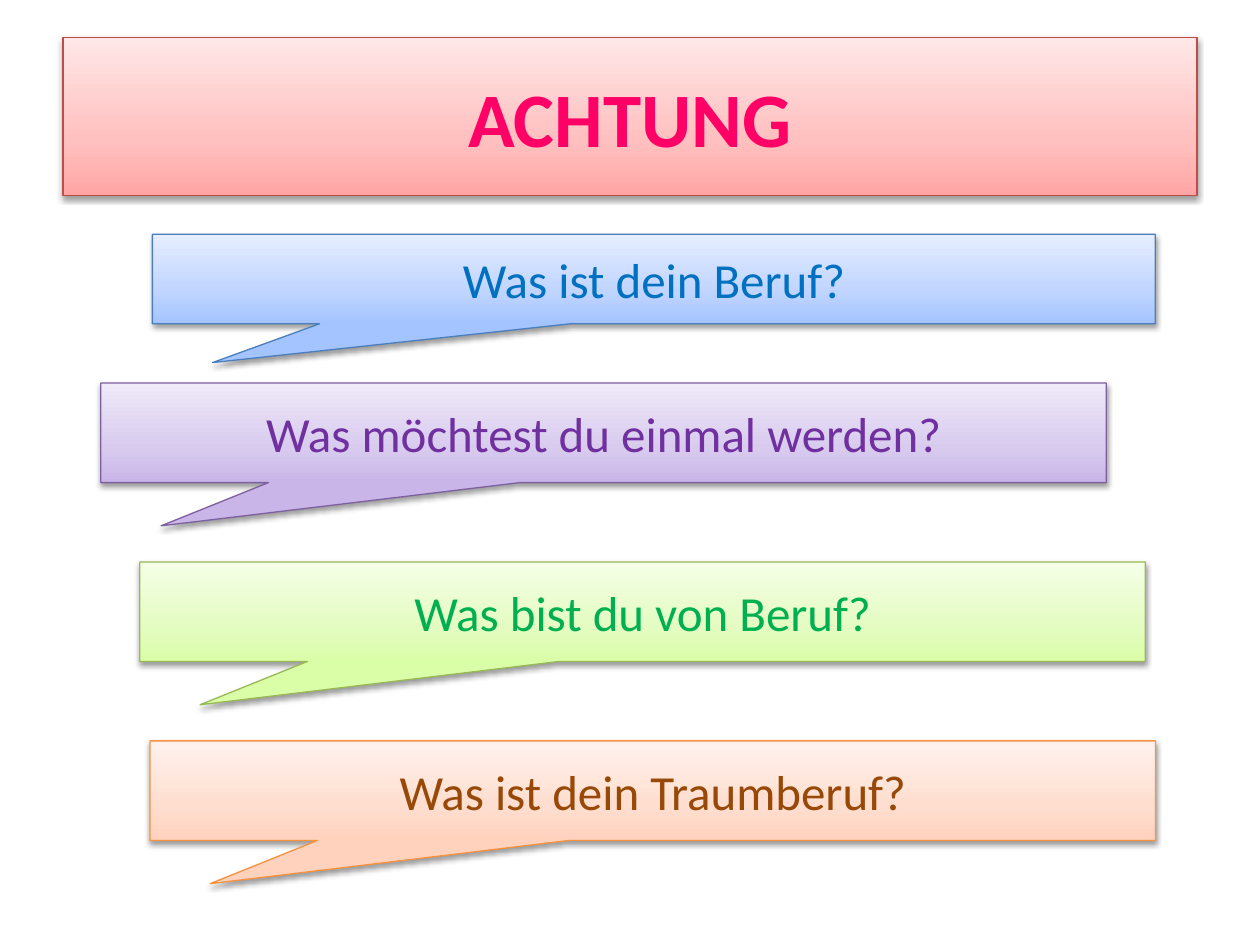
"""Build a slide with a title banner and four question callouts."""
from copy import deepcopy
from dataclasses import dataclass

from lxml import etree
from pptx import Presentation
from pptx.dml.color import RGBColor
from pptx.enum import shapes, text
from pptx.oxml.ns import qn
from pptx.util import Inches, Pt


@dataclass(frozen=True)
class Palette:
    stops: tuple[str, str, str]
    line: str
    font: str


@dataclass(frozen=True)
class Theme:
    font: str = "Calibri"
    title_size: int = 44
    body_size: int = 28
    line_width: float = 0.75
    stop_positions: tuple[float, ...] = (0, 0.35, 1)
    shadow: str = "000000"
    red: Palette = Palette(("FFA6A5", "FFC0BF", "FFE7E7"), "BF4C48", "FF0066")
    blue: Palette = Palette(("A4C4FF", "BFD4FF", "E6EEFF"), "4B7EBC", "0070C0")
    purple: Palette = Palette(("C9B5E8", "D8CBEE", "F0EAF9"), "7D60A0", "7030A0")
    green: Palette = Palette(("DAFDA7", "E4FCC2", "F5FFE7"), "98B955", "00B050")
    orange: Palette = Palette(("FFD2BD", "FFDED0", "FFF2ED"), "F69240", "984807")


@dataclass(frozen=True)
class Callout:
    words: str
    left: float
    top: float
    palette: Palette
    width: float = 7.98
    height: float = 0.79


THEME = Theme()
CALLOUTS = (
    Callout("Was ist dein Beruf?", 1.21, 1.86, THEME.blue, 7.96, 0.71),
    Callout("Was möchtest du einmal werden?", 0.8, 3.04, THEME.purple),
    Callout("Was bist du von Beruf?", 1.11, 4.46, THEME.green),
    Callout("Was ist dein Traumberuf?", 1.19, 5.88, THEME.orange),
)


def add_shadow(shape) -> None:
    """Give the shape a soft shadow straight below it."""
    shape.shadow.inherit = False
    effects = shape._element.spPr.find(qn("a:effectLst"))
    shadow = etree.SubElement(
        effects, qn("a:outerShdw"), blurRad=str(Pt(3.1)), dist=str(Pt(1.6)),
        dir="5400000", rotWithShape="0")
    color = etree.SubElement(shadow, qn("a:srgbClr"), val=THEME.shadow)
    etree.SubElement(color, qn("a:alpha"), val="38000")


def style_shape(shape, palette: Palette) -> None:
    """Apply the upward gradient, outline and shadow."""
    shape.fill.gradient()
    shape.fill.gradient_angle = 90
    stop_list = shape._element.spPr.find(".//" + qn("a:gsLst"))
    stop_list.append(deepcopy(stop_list[0]))
    stops = zip(shape.fill.gradient_stops, THEME.stop_positions, palette.stops)
    for stop, position, color in stops:
        stop.position = position
        stop.color.rgb = RGBColor.from_string(color)
    shape.line.color.rgb = RGBColor.from_string(palette.line)
    shape.line.width = Pt(THEME.line_width)
    add_shadow(shape)


def write_text(shape, words: str, *, size: int, color: str, bold: bool = False) -> None:
    """Write one centred line into the shape."""
    frame = shape.text_frame
    frame.word_wrap = True
    frame.vertical_anchor = text.MSO_ANCHOR.MIDDLE
    para = frame.paragraphs[0]
    para.alignment = text.PP_ALIGN.CENTER
    span = para.add_run()
    span.text = words
    span.font.name = THEME.font
    span.font.size = Pt(size)
    span.font.bold = bold
    span.font.color.rgb = RGBColor.from_string(color)


def format_title(title, words: str) -> None:
    """Place and style the title banner."""
    title.left, title.top = Inches(0.5), Inches(0.3)
    title.width, title.height = Inches(9), Inches(1.25)
    style_shape(title, THEME.red)
    write_text(title, words, size=THEME.title_size, color=THEME.red.font, bold=True)


def draw_callout(page, callout: Callout) -> None:
    """Draw one speech callout with its question."""
    box = page.shapes.add_shape(
        shapes.MSO_SHAPE.RECTANGULAR_CALLOUT, Inches(callout.left),
        Inches(callout.top), Inches(callout.width), Inches(callout.height))
    box.adjustments[0], box.adjustments[1] = -0.44, 0.934
    style_shape(box, callout.palette)
    write_text(box, callout.words, size=THEME.body_size, color=callout.palette.font)


def main() -> None:
    """Build and save the deck."""
    deck = Presentation()
    deck.slide_width, deck.slide_height = Inches(10), Inches(7.5)
    page = deck.slides.add_slide(deck.slide_layouts[5])
    format_title(page.shapes.title, "ACHTUNG")
    for callout in CALLOUTS:
        draw_callout(page, callout)
    deck.save("out.pptx")


if __name__ == "__main__":
    main()
